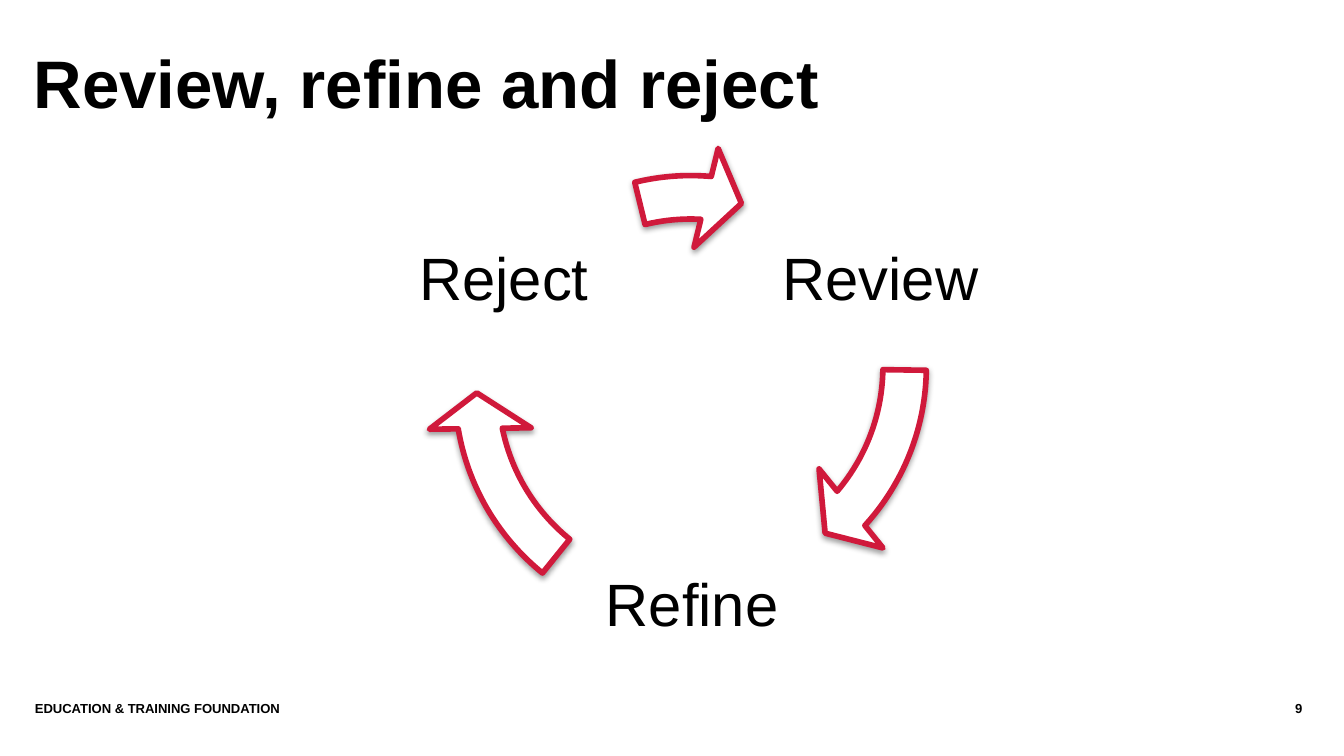
from lxml import etree
from pptx import Presentation
from pptx.dml.color import RGBColor
from pptx.enum.shapes import MSO_SHAPE
from pptx.enum.text import MSO_ANCHOR, PP_ALIGN
from pptx.oxml.ns import qn
from pptx.util import Pt

CIRCULAR_ARROW = MSO_SHAPE.CIRCULAR_ARROW
TOP, MIDDLE = MSO_ANCHOR.TOP, MSO_ANCHOR.MIDDLE
LEFT, CENTER, RIGHT = PP_ALIGN.LEFT, PP_ALIGN.CENTER, PP_ALIGN.RIGHT

# Content
TITLE = "Review, refine and reject"
# Stage, label left and top, arrow top, arrow start and end in degrees
STAGES = [
    ("Review", 398.2, 90.7, 54.7, 0.84, 41.45),
    ("Refine", 297.4, 265, 67, 128.96, 169.57),
    ("Reject", 196.6, 90.7, 78.5, 256.28, 274.13),
]
# Text, left, width, alignment
FOOTER = [
    ("9", 626.4, 71.3, RIGHT),
    ("EDUCATION & TRAINING FOUNDATION", 18.7, 605.5, LEFT),
]

# Style
FONT = "Arial"
BLACK, WHITE, RED = "000000", "FFFFFF", "D0193B"
LABEL_WIDTH, LABEL_HEIGHT = 146.9, 120.2
RING_LEFT, RING_SIZE = 228.2, 283.7
FOOTER_TOP, FOOTER_HEIGHT = 375.1, 21.6
HEAD_DEGREES = 9.6
BAND, HEAD_WIDTH = 0.082, 0.096  # shares of the ring size


def color(hex_code):
    return RGBColor.from_string(hex_code)


def place(shape, left, top, width, height):
    shape.left, shape.top = Pt(left), Pt(top)
    shape.width, shape.height = Pt(width), Pt(height)


def write(shape, text, size, bold=False, align=LEFT, anchor=TOP, inset=0):
    frame = shape.text_frame
    frame.word_wrap = True
    frame.vertical_anchor = anchor
    frame.margin_left = frame.margin_right = Pt(inset)
    frame.margin_top = frame.margin_bottom = Pt(inset)
    frame.text = text
    paragraph = frame.paragraphs[0]
    paragraph.alignment = align
    font = paragraph.font
    font.name, font.size, font.bold = FONT, Pt(size), bold
    font.color.rgb = color(BLACK)
    return paragraph


def add_soft_shadow(shape):
    shape.shadow.inherit = False
    effects = shape._element.spPr.find(qn("a:effectLst"))
    shadow = etree.SubElement(
        effects, qn("a:outerShdw"), blurRad=str(Pt(3.15)), dist=str(Pt(1.57)),
        dir=str(90 * 60000), rotWithShape="0")
    tint = etree.SubElement(shadow, qn("a:srgbClr"), val=BLACK)
    etree.SubElement(tint, qn("a:alpha"), val="38000")


def add_cycle_arrow(shapes, top, start, end):
    arrow = shapes.add_shape(CIRCULAR_ARROW, 0, 0, 0, 0)
    place(arrow, RING_LEFT, top, RING_SIZE, RING_SIZE)
    # Angles are stored in 60000ths of a degree, adjustments in 100000ths
    angles = [degrees * 0.6 for degrees in (HEAD_DEGREES, end, start)]
    for index, value in enumerate([BAND, *angles, HEAD_WIDTH]):
        arrow.adjustments[index] = value
    arrow.fill.solid()
    arrow.fill.fore_color.rgb = color(WHITE)
    arrow.line.color.rgb = color(RED)
    arrow.line.width = Pt(3)
    etree.SubElement(arrow.line._get_or_add_ln(), qn("a:round"))
    add_soft_shadow(arrow)


prs = Presentation()
prs.slide_width, prs.slide_height = Pt(720), Pt(405)
slide = prs.slides.add_slide(prs.slide_layouts[5])
shapes = slide.shapes

# Title
title = shapes.title
place(title, 18, 19.4, 664.6, 54.7)
write(title, TITLE, 36, bold=True)
title.text_frame.margin_top = Pt(3)

# Cycle of stages
for stage, left, top, arrow_top, start, end in STAGES:
    label = shapes.add_textbox(0, 0, 0, 0)
    place(label, left, top, LABEL_WIDTH, LABEL_HEIGHT)
    write(label, stage, 32, align=CENTER, anchor=MIDDLE, inset=3).line_spacing = 0.9
    add_cycle_arrow(shapes, arrow_top, start, end)

# Footer
for text, left, width, align in FOOTER:
    note = shapes.add_textbox(0, 0, 0, 0)
    place(note, left, FOOTER_TOP, width, FOOTER_HEIGHT)
    write(note, text, 7, bold=True, align=align)

prs.save("out.pptx")
